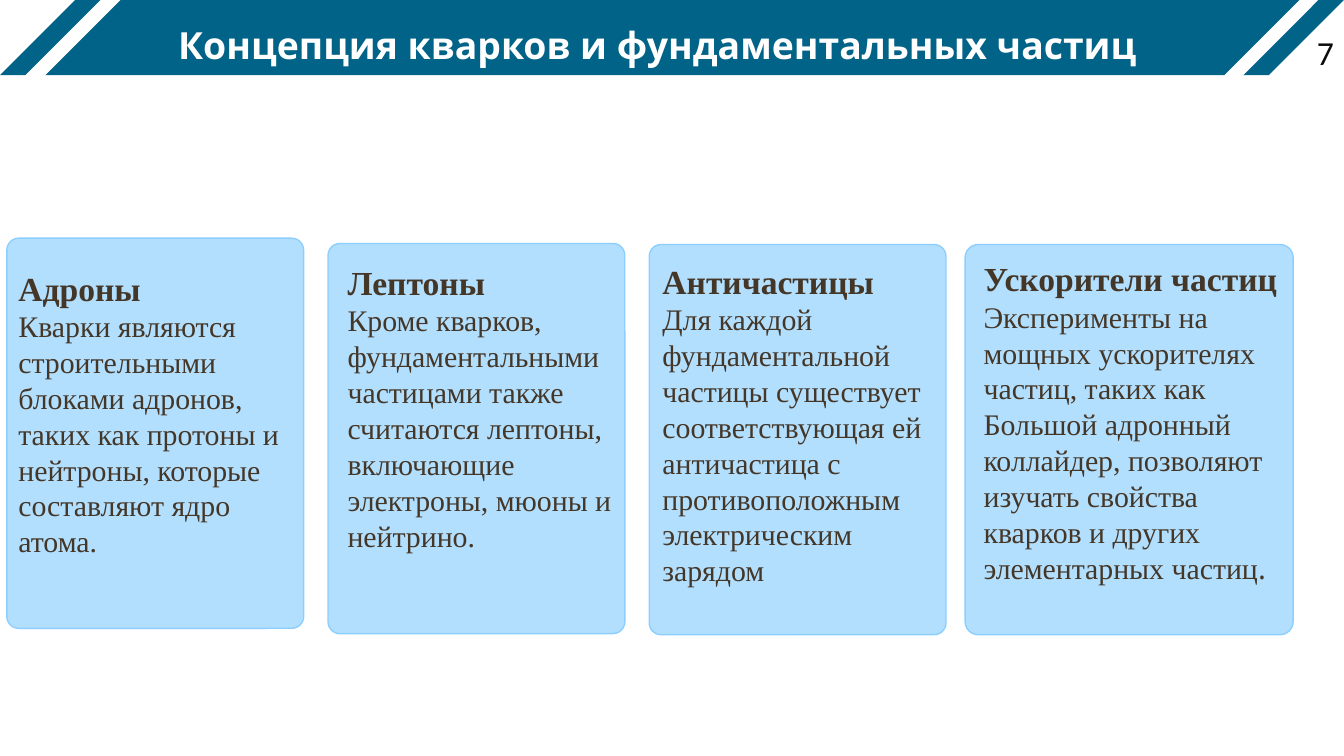
from pptx import Presentation
from pptx.dml.color import RGBColor
from pptx.enum.shapes import MSO_SHAPE as Kind
from pptx.enum.text import MSO_ANCHOR as Anchor, PP_ALIGN as Align
from pptx.util import Cm, Pt

TITLE = "Концепция кварков и фундаментальных частиц"
PAGE = "7"
SERIF, SANS = "Times New Roman", "Open Sans"
TEAL, SKY, EDGE, BROWN = "006387", "B3DFFF", "8CCFFF", "443728"
BAND = 1.42
BARS = [(0.86, 23.7), (0, 1.9), (23.5, 1.9)]
CARDS = [
    dict(head="Адроны", body="Кварки являются строительными блоками адронов, таких как "
         "протоны и нейтроны, которые составляют ядро атома.",
         box=(0.13, 4.5, 5.61), text=(0.1, 4.93), lead=None),
    dict(head="Лептоны", body="Кроме кварков, фундаментальными частицами также считаются "
         "лептоны, включающие электроны, мюоны и нейтрино.",
         box=(6.2, 4.6, 5.61), text=(6.32, 4.62), lead=27.3),
    dict(head="Античастицы", body="Для каждой фундаментальной частицы существует "
         "соответствующая ей античастица с противоположным электрическим зарядом",
         box=(12.27, 4.62, 5.61), text=(12.27, 4.6), lead=27.3),
    dict(head="Ускорители частиц", body="Эксперименты на мощных ускорителях частиц, таких как "
         "Большой адронный коллайдер, позволяют изучать свойства кварков и других "
         "элементарных частиц", end=".",
         box=(18.24, 4.62, 6.2), text=(18.34, 4.55), lead=27.3),
]


def paint(code):
    return RGBColor.from_string(code)


def draw(kind, x, y, w, h, fill, line=None, adj=0):
    shape = slide.shapes.add_shape(kind, Cm(x), Cm(y), Cm(w), Cm(h))
    shape.shadow.inherit = False
    shape.adjustments[0] = adj
    shape.fill.solid()
    shape.fill.fore_color.rgb = paint(fill)
    if line:
        shape.line.color.rgb = paint(line)
        shape.line.width = Pt(0.75)
    else:
        shape.line.fill.background()


def frame(x, y, w, h):
    area = slide.shapes.add_textbox(Cm(x), Cm(y), Cm(w), Cm(h)).text_frame
    area.word_wrap = True
    return area


def write(para, text, size=16, font=SERIF, color=BROWN, bold=False, align=Align.LEFT, lead=None):
    run = para.add_run()
    run.text = text
    run.font.size, run.font.name, run.font.bold = Pt(size), font, bold
    run.font.color.rgb = paint(color)
    para.alignment = align
    if lead:
        para.line_spacing = Pt(lead)


deck = Presentation()
deck.slide_width, deck.slide_height = Cm(25.4), Cm(14.28)
slide = deck.slides.add_slide(deck.slide_layouts[5])

for x, w in BARS:
    draw(Kind.PARALLELOGRAM, x, 0, w, BAND, TEAL, adj=1)

title = slide.shapes.title
title.left, title.top, title.width, title.height = Cm(0.13), Cm(0.13), Cm(24.6), Cm(BAND)
area = title.text_frame
area.margin_left = area.margin_right = area.margin_top = area.margin_bottom = 0
area.vertical_anchor = Anchor.MIDDLE
write(area.paragraphs[0], TITLE, size=20, font=SANS, color="FFFFFF", bold=True, align=Align.CENTER)
tree = slide.shapes[0].element.getparent()
tree.append(title.element)

area = frame(24.64, 0.48, 0.76, 0.76)
area.margin_right = 0
write(area.paragraphs[0], PAGE, size=18, font="Calibri", color="0C0C0C")

for card in CARDS:
    x, y, w = card["box"]
    draw(Kind.ROUNDED_RECTANGLE, x, y, w, 7.37, SKY, line=EDGE, adj=0.04)
    area = frame(*card["text"], 6.1, 6.7)
    write(area.paragraphs[0], card["head"], size=18, bold=True, lead=card["lead"])
    body = area.add_paragraph()
    write(body, card["body"])
    if "end" in card:
        write(body, card["end"], font=SANS)

deck.save("out.pptx")
